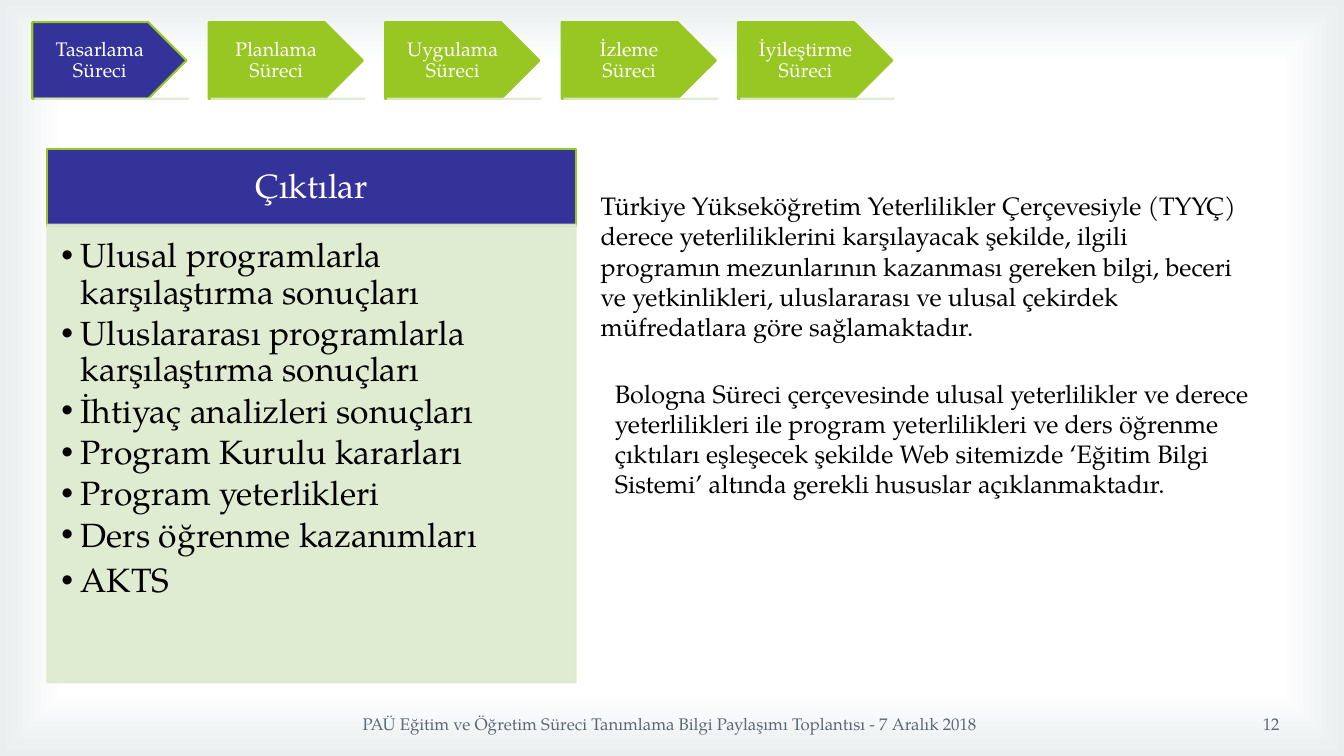
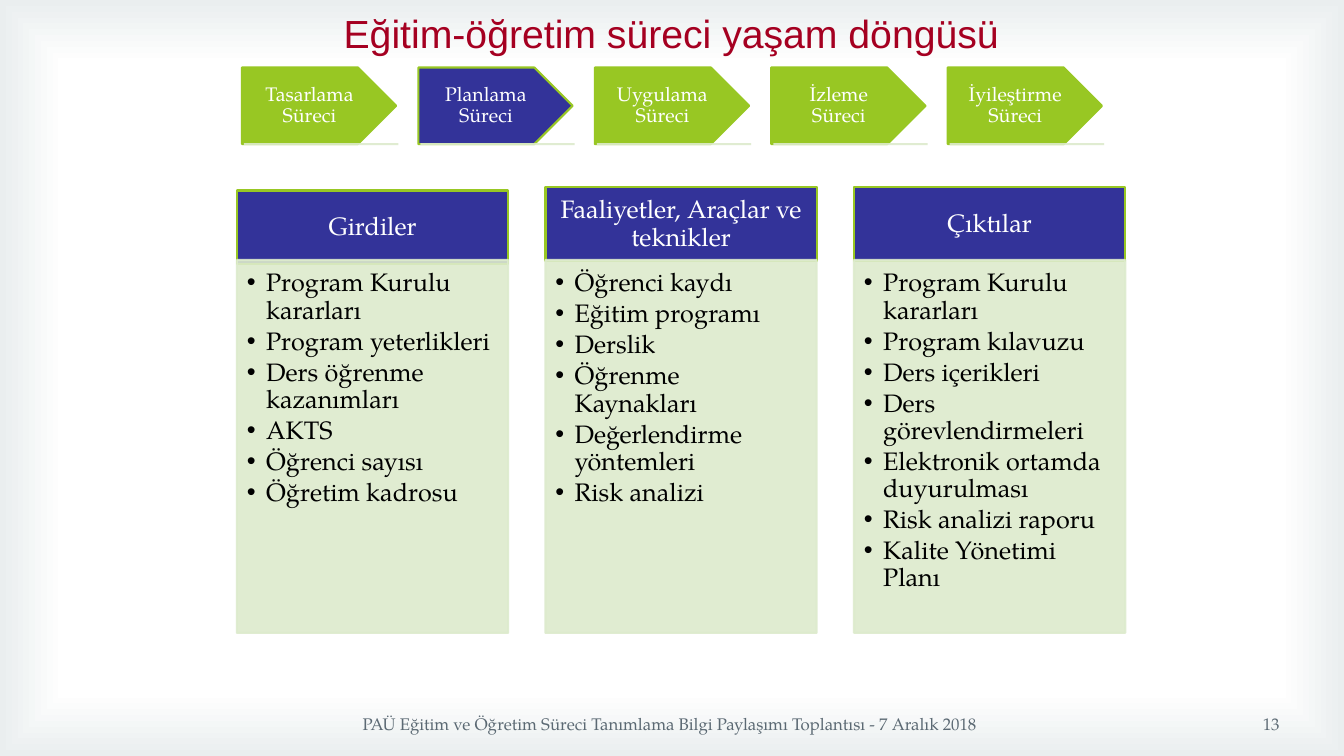
from dataclasses import dataclass
from typing import Sequence

import lxml.etree
import pptx
import pptx.dml.color
import pptx.enum.shapes
import pptx.enum.text
import pptx.oxml
import pptx.oxml.ns
import pptx.util

Inches = pptx.util.Inches
Pt = pptx.util.Pt
RGB = pptx.dml.color.RGBColor
PRESET = pptx.enum.shapes.MSO_SHAPE
ALIGN = pptx.enum.text.PP_ALIGN
ANCHOR = pptx.enum.text.MSO_ANCHOR
qn = pptx.oxml.ns.qn


@dataclass(frozen=True)
class Theme:
    navy: str = "333399"
    green: str = "98C723"
    pale: str = "DDEBCD"
    pale_alpha: int = 90
    white: str = "FFFFFF"
    black: str = "000000"
    slate: str = "5B6973"
    crimson: str = "A50021"
    edge: str = "A4B7BB"
    font: str = "TeX Gyre Pagella"
    title_font: str = "Arial"
    title_size: int = 28
    large_size: int = 24
    text_size: int = 18
    step_size: int = 14
    footer_size: int = 12
    outline: float = 1.5


THEME = Theme()


@dataclass(frozen=True)
class Box:
    left: float
    top: float
    width: float
    height: float

    def lengths(self) -> tuple:
        return tuple(Inches(v) for v in (self.left, self.top, self.width, self.height))


@dataclass(frozen=True)
class PanelStyle:
    size: int
    heading_insets: tuple
    body_insets: tuple


@dataclass(frozen=True)
class Panel:
    heading: str
    items: tuple
    heading_box: Box
    body_box: Box


LARGE_PANEL = PanelStyle(THEME.large_size, (0.19, 0.11, 0.19, 0.11), (0.14, 0.14, 0.19, 0.21))
SMALL_PANEL = PanelStyle(THEME.text_size, (0.14, 0.08, 0.14, 0.08), (0.1, 0.1, 0.14, 0.16))

STEPS = ("Tasarlama Süreci", "Planlama Süreci", "Uygulama Süreci", "İzleme Süreci", "İyileştirme Süreci")
STEP_PITCH, STEP_WIDTH, STEP_HEIGHT = 1.75, 1.53, 0.76
FOOTER = "PAÜ Eğitim ve Öğretim Süreci Tanımlama Bilgi Paylaşımı Toplantısı - 7 Aralık 2018"

DESIGN_OUTPUTS = Panel(
    "Çıktılar",
    (
        "Ulusal programlarla karşılaştırma sonuçları",
        "Uluslararası programlarla karşılaştırma sonuçları",
        "İhtiyaç analizleri sonuçları",
        "Program Kurulu kararları",
        "Program yeterlikleri",
        "Ders öğrenme kazanımları",
        "AKTS",
    ),
    Box(0.47, 1.48, 5.24, 0.76),
    Box(0.47, 2.23, 5.24, 4.54),
)
EXPLANATIONS = (
    (
        "Türkiye Yükseköğretim Yeterlilikler Çerçevesiyle (TYYÇ) derece yeterliliklerini "
        "karşılayacak şekilde, ilgili programın mezunlarının kazanması gereken bilgi, beceri "
        "ve yetkinlikleri, uluslararası ve ulusal çekirdek müfredatlara göre sağlamaktadır.",
        Box(5.86, 1.84, 6.67, 1.62),
    ),
    (
        "Bologna Süreci çerçevesinde ulusal yeterlilikler ve derece yeterlilikleri ile program "
        "yeterlilikleri ve ders öğrenme çıktıları eşleşecek şekilde Web sitemizde ‘Eğitim Bilgi "
        "Sistemi’ altında gerekli hususlar açıklanmaktadır.",
        Box(6, 3.7, 6.67, 1.31),
    ),
)
PLANNING = (
    (
        "Girdiler",
        1.89,
        (
            "Program Kurulu kararları",
            "Program yeterlikleri",
            "Ders öğrenme kazanımları",
            "AKTS",
            "Öğrenci sayısı",
            "Öğretim kadrosu",
        ),
    ),
    (
        "Faaliyetler, Araçlar ve teknikler",
        1.86,
        (
            "Öğrenci kaydı",
            "Eğitim programı",
            "Derslik",
            "Öğrenme Kaynakları",
            "Değerlendirme yöntemleri",
            "Risk analizi",
        ),
    ),
    (
        "Çıktılar",
        1.86,
        (
            "Program Kurulu kararları",
            "Program kılavuzu",
            "Ders içerikleri",
            "Ders görevlendirmeleri",
            "Elektronik ortamda duyurulması",
            "Risk analizi raporu",
            "Kalite Yönetimi Planı",
        ),
    ),
)


def color(code: str) -> RGB:
    return RGB.from_string(code)


def write(shape, *texts: str, size: int, ink: str = THEME.black, font: str = THEME.font,
          align=ALIGN.LEFT, anchor=ANCHOR.TOP, insets: tuple = (0.1, 0.05, 0.1, 0.05),
          spacing: float = 1.0, bullets: bool = False) -> list:
    frame = shape.text_frame
    frame.word_wrap = True
    frame.vertical_anchor = anchor
    frame.margin_left, frame.margin_top, frame.margin_right, frame.margin_bottom = map(Inches, insets)
    paragraphs = []
    for number, text in enumerate(texts):
        paragraph = frame.add_paragraph() if number else frame.paragraphs[0]
        paragraph.alignment = align
        paragraph.line_spacing = spacing
        run = paragraph.add_run()
        run.text = text
        run.font.size = Pt(size)
        run.font.name = font
        run.font.color.rgb = color(ink)
        if bullets:
            paragraph.space_after = Pt(size * 0.15)
            properties = paragraph._p.get_or_add_pPr()
            properties.set("marL", str(Inches(0.19)))
            properties.set("indent", str(-Inches(0.19)))
            bullet_font = lxml.etree.SubElement(properties, qn("a:buFont"))
            bullet_font.set("typeface", "Arial")
            lxml.etree.SubElement(properties, qn("a:buChar")).set("char", "•")
        paragraphs.append(paragraph)
    return paragraphs


def add_label(slide, box: Box, text: str, **style) -> None:
    write(slide.shapes.add_textbox(*box.lengths()), text, **style)


def add_block(slide, preset, box: Box, fill: str, line: str):
    block = slide.shapes.add_shape(preset, *box.lengths())
    block.shadow.inherit = False
    block.fill.solid()
    block.fill.fore_color.rgb = color(fill)
    block.line.color.rgb = color(line)
    block.line.width = Pt(THEME.outline)
    return block


def fade(shape) -> None:
    for tint in shape.element.spPr.iter(qn("a:srgbClr")):
        lxml.etree.SubElement(tint, qn("a:alpha")).set("val", str(THEME.pale_alpha * 1000))


def add_steps(slide, left: float, top: float, active: int) -> None:
    for number, step in enumerate(STEPS):
        x = left + number * STEP_PITCH
        arrow = add_block(slide, PRESET.PENTAGON, Box(x, top, STEP_WIDTH, STEP_HEIGHT),
                          THEME.navy if number == active else THEME.green, THEME.green)
        write(arrow, step, size=THEME.step_size, ink=THEME.white, align=ALIGN.CENTER,
              anchor=ANCHOR.MIDDLE, insets=(0.11, 0.06, 0.11, 0.06), spacing=0.9)
        start, y = x + 0.02, Inches(top + STEP_HEIGHT)
        underline = slide.shapes.add_connector(pptx.enum.shapes.MSO_CONNECTOR.STRAIGHT,
                                               Inches(start), y, Inches(start + STEP_WIDTH), y)
        underline.line.color.rgb = color(THEME.pale)
        underline.line.width = Pt(THEME.outline)
        fade(underline)
        lxml.etree.SubElement(underline.element.spPr, qn("a:effectLst"))


def add_panel(slide, panel: Panel, style: PanelStyle) -> list:
    heading = add_block(slide, PRESET.RECTANGLE, panel.heading_box, THEME.navy, THEME.green)
    write(heading, panel.heading, size=style.size, ink=THEME.white, align=ALIGN.CENTER,
          anchor=ANCHOR.MIDDLE, insets=style.heading_insets, spacing=0.9)
    body = add_block(slide, PRESET.RECTANGLE, panel.body_box, THEME.pale, THEME.pale)
    fade(body)
    return write(body, *panel.items, size=style.size, insets=style.body_insets,
                 spacing=0.9, bullets=True)


def add_footer(slide, number: int) -> None:
    style = dict(size=THEME.footer_size, ink=THEME.slate, anchor=ANCHOR.MIDDLE)
    add_label(slide, Box(1.54, 6.98, 10.21, 0.4), FOOTER, align=ALIGN.CENTER, **style)
    add_label(slide, Box(9.68, 6.98, 3.11, 0.4), str(number), align=ALIGN.RIGHT, **style)


def set_background(master) -> None:
    master.background.fill.solid()
    solid = master.element.cSld.find(".//" + qn("a:solidFill"))
    gradient = pptx.oxml.parse_xml(
        '<a:gradFill xmlns:a="http://schemas.openxmlformats.org/drawingml/2006/main" rotWithShape="1">'
        f'<a:gsLst><a:gs pos="83000"><a:srgbClr val="{THEME.white}"/></a:gs>'
        f'<a:gs pos="100000"><a:srgbClr val="{THEME.edge}">'
        '<a:alpha val="23000"/></a:srgbClr></a:gs></a:gsLst>'
        '<a:path path="rect"><a:fillToRect l="50000" t="50000" r="50000" b="50000"/></a:path>'
        "</a:gradFill>"
    )
    for tint in gradient.iter(qn("a:srgbClr")):
        if len(tint):
            tint.remove(tint[0])
            tint.set("val", "EAEEEF")
    solid.getparent().replace(solid, gradient)


def build_design(slide) -> None:
    add_steps(slide, 0.32, 0.22, active=0)
    items = add_panel(slide, DESIGN_OUTPUTS, LARGE_PANEL)
    items[-1].line_spacing = 1.0
    for text, box in EXPLANATIONS:
        add_label(slide, box, text, size=THEME.text_size)


def build_planning(slide) -> None:
    add_steps(slide, 2.4, 0.67, active=1)
    for column, (heading, top, items) in enumerate(PLANNING):
        left = 2.35 + column * 3.06
        add_panel(slide, Panel(heading, items, Box(left, top, 2.69, 0.73),
                               Box(left, 2.58, 2.69, 3.7)), SMALL_PANEL)
    add_label(slide, Box(3.31, 0.04, 6.89, 0.57), "Eğitim-öğretim süreci yaşam döngüsü",
              size=THEME.title_size, ink=THEME.crimson, font=THEME.title_font)


def main(builders: Sequence = (build_design, build_planning)) -> None:
    deck = pptx.Presentation()
    deck.slide_width, deck.slide_height = Inches(13.33), Inches(7.5)
    set_background(deck.slide_master)
    for number, build in enumerate(builders, start=12):
        slide = deck.slides.add_slide(deck.slide_layouts[6])
        build(slide)
        add_footer(slide, number)
    deck.save("out.pptx")


if __name__ == "__main__":
    main()
